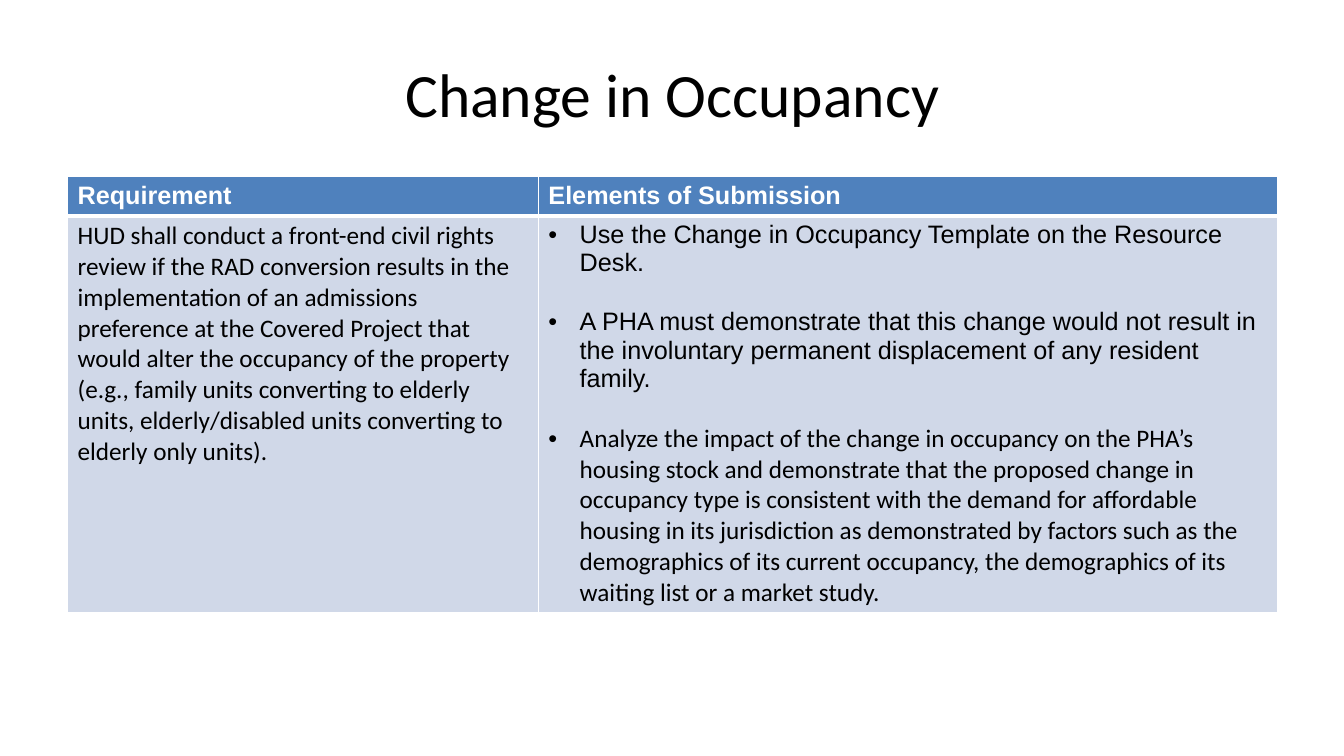
from dataclasses import dataclass

from lxml import etree
from pptx import Presentation
from pptx.dml.color import RGBColor
from pptx.enum.text import MSO_ANCHOR, PP_ALIGN
from pptx.oxml.ns import qn
from pptx.util import Inches, Pt


@dataclass(frozen=True)
class Theme:
    header: str = "4F81BD"
    body: str = "D0D8E8"
    white: str = "FFFFFF"
    black: str = "000000"
    title_size: int = 44
    text_size: int = 18


theme = Theme()


def write(para, text, font="Arial", size=theme.text_size, color=theme.black,
          bold=False, bullet=False, before=0, align=PP_ALIGN.LEFT):
    para.alignment = align
    if before:
        para.space_before = Pt(before)
    if bullet:
        props = para._p.get_or_add_pPr()
        props.set("marL", str(Inches(0.31)))
        props.set("indent", str(Inches(-0.31)))
        etree.SubElement(props, qn("a:buFont")).set("typeface", "Arial")
        etree.SubElement(props, qn("a:buChar")).set("char", "•")
    span = para.add_run()
    span.text = text
    span.font.name = font
    span.font.size = Pt(size)
    span.font.bold = bold
    span.font.color.rgb = RGBColor.from_string(color)


def add_border(cell, side, width):
    line = etree.SubElement(cell._tc.get_or_add_tcPr(), qn(f"a:{side}"), w=str(Pt(width)))
    fill = etree.SubElement(line, qn("a:solidFill"))
    etree.SubElement(fill, qn("a:srgbClr"), val=theme.white)


# Slide
deck = Presentation()
deck.slide_width, deck.slide_height = Inches(13.33), Inches(7.5)
page = deck.slides.add_slide(deck.slide_layouts[5])

# Title
title = page.shapes.title
title.left, title.top = Inches(0.67), Inches(0.3)
title.width, title.height = Inches(12), Inches(1.25)
title.text_frame.vertical_anchor = MSO_ANCHOR.MIDDLE
write(title.text_frame.paragraphs[0], "Change in Occupancy", font="Calibri",
      size=theme.title_size, align=PP_ALIGN.CENTER)

# Table content: each cell is a list of (text, font)
rows = [
    [[("Requirement", "Arial")], [("Elements of Submission", "Arial")]],
    [
        [("HUD shall conduct a front-end civil rights review if the RAD conversion "
          "results in the implementation of an admissions preference at the Covered "
          "Project that would alter the occupancy of the property (e.g., family units "
          "converting to elderly units, elderly/disabled units converting to elderly "
          "only units).", "Calibri")],
        [("Use the Change in Occupancy Template on the Resource Desk.", "Arial"),
         ("A PHA must demonstrate that this change would not result in the involuntary "
          "permanent displacement of any resident family.", "Arial"),
         ("Analyze the impact of the change in occupancy on the PHA’s housing stock and "
          "demonstrate that the proposed change in occupancy type is consistent with the "
          "demand for affordable housing in its jurisdiction as demonstrated by factors "
          "such as the demographics of its current occupancy, the demographics of its "
          "waiting list or a market study.", "Calibri")],
    ],
]

# Table grid
table = page.shapes.add_table(2, 2, Inches(0.67), Inches(1.75),
                              Inches(12), Inches(4.33)).table
for column, width in zip(table.columns, (4.67, 7.33)):
    column.width = Inches(width)
for row, height in zip(table.rows, (0.39, 3.94)):
    row.height = Inches(height)

# Table cells
for r, row in enumerate(rows):
    is_header = r == 0
    for c, items in enumerate(row):
        cell = table.cell(r, c)
        for side in ("lnL", "lnR", "lnT", "lnB"):
            at_header_edge = side == ("lnB" if is_header else "lnT")
            add_border(cell, side, 3 if at_header_edge else 1)
        cell.fill.solid()
        cell.fill.fore_color.rgb = RGBColor.from_string(
            theme.header if is_header else theme.body)
        frame = cell.text_frame
        for i, (text, font) in enumerate(items):
            para = frame.add_paragraph() if i else frame.paragraphs[0]
            write(para, text, font=font, bold=is_header,
                  color=theme.white if is_header else theme.black,
                  bullet=len(items) > 1, before=22 if i else 0)

deck.save("out.pptx")
